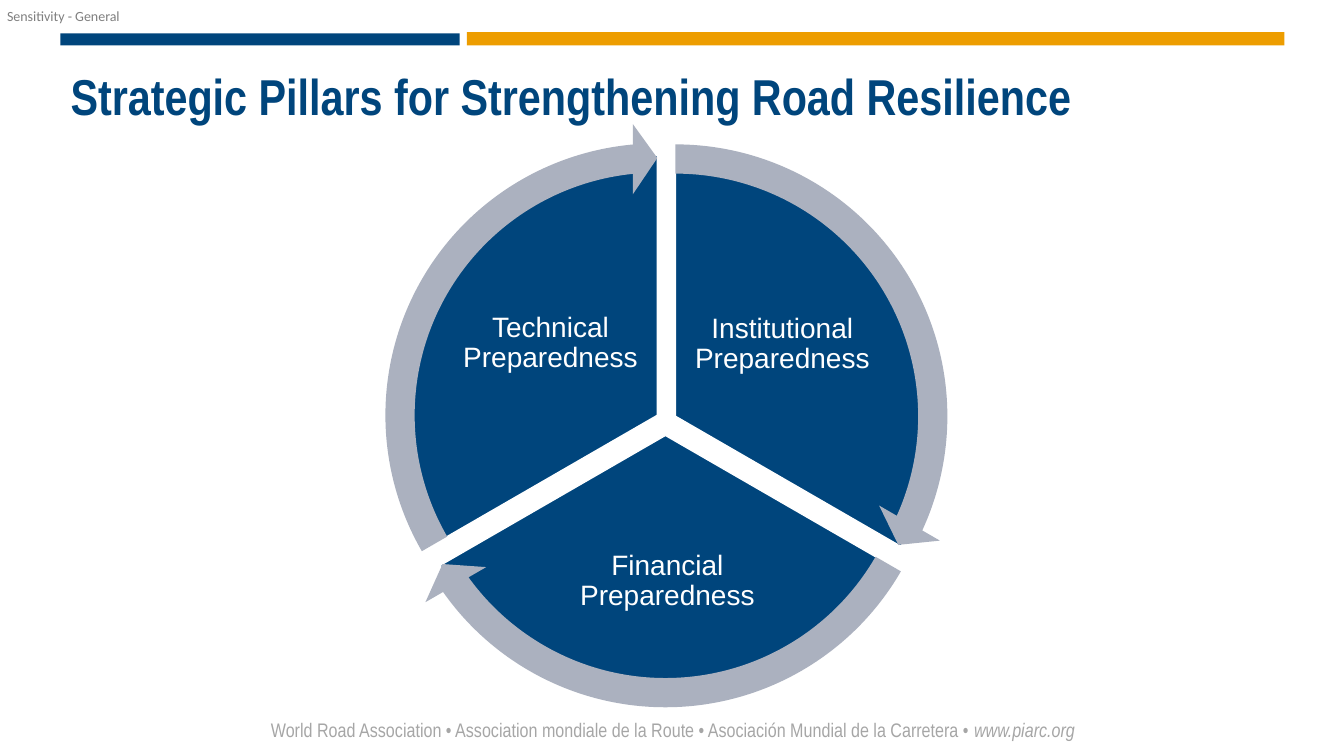
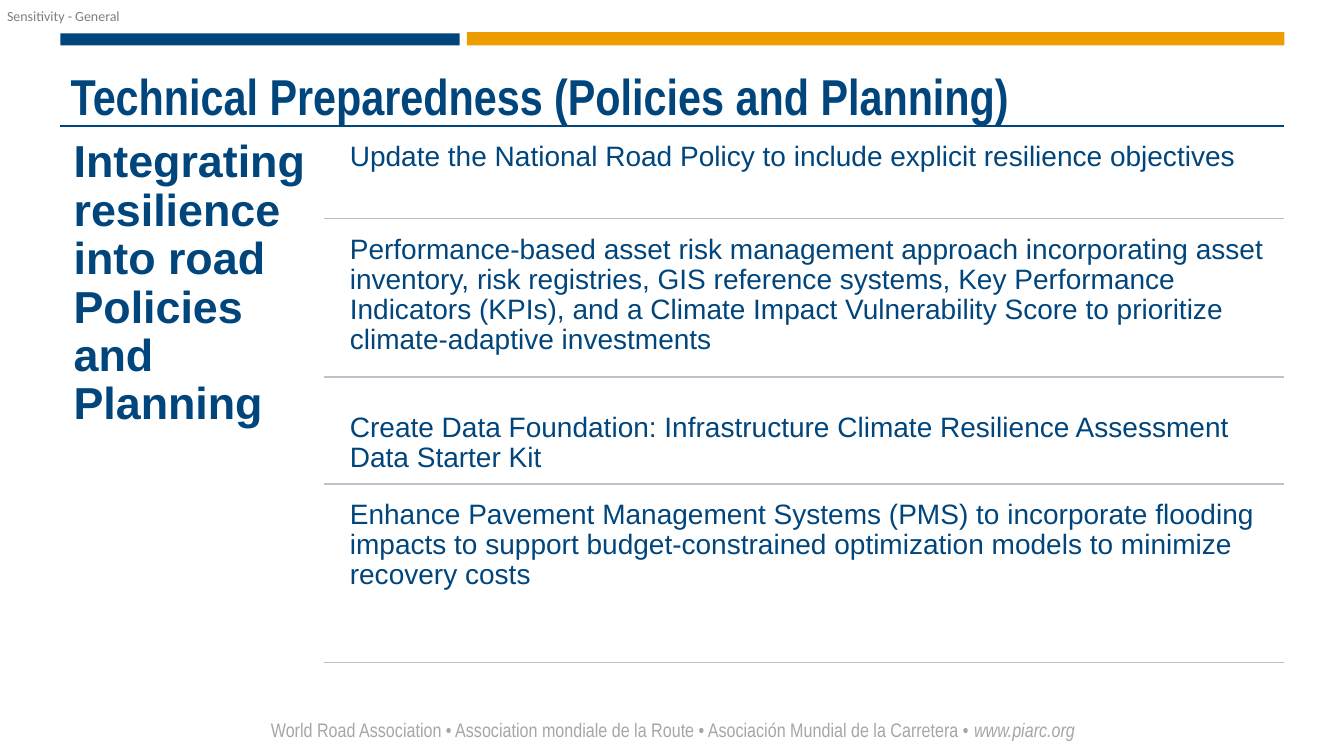
"""Build two slides on road resilience with a shared frame."""
from dataclasses import dataclass

from lxml import etree
from pptx import Presentation
from pptx.dml.color import RGBColor
from pptx.enum import shapes as kinds, text as modes
from pptx.oxml import ns
from pptx.shapes.autoshape import Shape
from pptx.slide import Slide
from pptx.text.text import TextFrame
from pptx.util import Inches, Pt

NAVY = RGBColor(0x00, 0x45, 0x7C)
AMBER = RGBColor(0xED, 0x9D, 0x00)
WHITE = RGBColor(0xFF, 0xFF, 0xFF)
STEEL = RGBColor(0xAB, 0xB1, 0xBF)
RULE = RGBColor(0xBD, 0xC1, 0xCC)
PALE = RGBColor(0xA6, 0xA6, 0xA6)
GREY = RGBColor(0x7F, 0x7F, 0x7F)

Box = tuple[float, float, float, float]
Kind = kinds.MSO_AUTO_SHAPE_TYPE
Align = modes.PP_ALIGN
Anchor = modes.MSO_ANCHOR

LEFT, RIGHT = 0.6, 12.73
PIE, RING, SHIFT = 5.16, 5.8, 0.32
TIP = 3.275


@dataclass
class Style:
    size: float
    color: RGBColor
    face: str = "Arial"
    bold: bool = False
    align: Align = Align.LEFT
    lead: float = 0.9


@dataclass
class Pillar:
    label: str
    left: float
    top: float
    start: float
    end: float
    area: Box


@dataclass
class Action:
    label: str
    top: float
    height: float
    rule: float


TITLE = Style(36, NAVY, "Arial Narrow", True)
FOOT = Style(14, PALE, "Arial Narrow", align=Align.CENTER, lead=1.0)
MARK = Style(10, GREY, "Calibri", lead=1.0)
LABEL = Style(20, WHITE, align=Align.CENTER)
LEAD = Style(32, NAVY, bold=True)
BODY = Style(20, NAVY)

PILLARS = [
    Pillar("Institutional Preparedness", 4.12, 1.55, 162, 18, (6.84, 2.65, 1.84, 1.54)),
    Pillar("Financial Preparedness", 4.02, 1.74, 18, 90, (5.24, 5.09, 2.76, 1.35)),
    Pillar("Technical Preparedness", 3.94, 1.54, 90, 162, (4.54, 2.64, 1.84, 1.54)),
]

ACTIONS = [
    Action("Update the National Road Policy to include explicit resilience objectives",
           1.33, 0.84, 2.17),
    Action("Performance-based asset risk management approach incorporating asset "
           "inventory, risk registries, GIS reference systems, Key Performance "
           "Indicators (KPIs), and a Climate Impact Vulnerability Score to prioritize "
           "climate-adaptive investments", 2.25, 1.69, 3.74),
    Action("Create Data Foundation: Infrastructure Climate Resilience Assessment "
           "Data Starter Kit", 4.02, 0.77, 4.8),
    Action("Enhance Pavement Management Systems (PMS) to incorporate flooding impacts "
           "to support budget-constrained optimization models to minimize recovery costs",
           4.88, 1.69, 6.57),
]


def style(frame: TextFrame, look: Style) -> None:
    """Format every run of a frame."""
    for para in frame.paragraphs:
        para.alignment = look.align
        para.line_spacing = look.lead
        for run in para.runs:
            font = run.font
            font.size, font.name, font.bold = Pt(look.size), look.face, look.bold
            font.color.rgb = look.color


def write(slide: Slide, words: str, box: Box, look: Style, pad: float = 0,
          anchor: Anchor = Anchor.TOP, wrap: bool = True) -> TextFrame:
    """Add a text box with equal insets."""
    frame = slide.shapes.add_textbox(*map(Inches, box)).text_frame
    frame.word_wrap = wrap
    frame.vertical_anchor = anchor
    frame.margin_left = frame.margin_right = Inches(pad)
    frame.margin_top = frame.margin_bottom = Inches(pad)
    frame.text = words
    style(frame, look)
    return frame


def draw(slide: Slide, kind: Kind, box: Box, fill: RGBColor) -> Shape:
    """Add a flat shape without outline."""
    shape = slide.shapes.add_shape(kind, *map(Inches, box))
    shape.shadow.inherit = False
    shape.fill.solid()
    shape.fill.fore_color.rgb = fill
    shape.line.fill.background()
    return shape


def rule(slide: Slide, left: float, top: float, color: RGBColor) -> None:
    """Draw a thin line to the right margin."""
    line = slide.shapes.add_connector(
        kinds.MSO_CONNECTOR.STRAIGHT, Inches(left), Inches(top), Inches(RIGHT), Inches(top))
    line.line.color.rgb = color
    line.line.width = Pt(1)
    etree.SubElement(line.element.spPr, ns.qn("a:effectLst"))


def start(deck: Presentation, words: str, height: float) -> Slide:
    """Add a slide with bands, footer, mark and title."""
    slide = deck.slides.add_slide(deck.slide_layouts[5])
    draw(slide, Kind.RECTANGLE, (LEFT, 0.33, 3.96, 0.12), NAVY)
    draw(slide, Kind.RECTANGLE, (4.63, 0.32, 8.11, 0.13), AMBER)
    foot = write(slide, "World Road Association • Association mondiale de la Route • "
                 "Asociación Mundial de la Carretera • ", (0.61, 7.07, 12.13, 0.34),
                 FOOT, 0.05)
    link = foot.paragraphs[0].add_run()
    link.text = "www.piarc.org"
    style(foot, FOOT)
    link.font.italic = True
    write(slide, "Sensitivity - General", (0.07, 0.07, 1.15, 0.17), MARK, wrap=False)
    title = slide.shapes.title
    title.left, title.top, title.width, title.height = map(
        Inches, (LEFT, 0.66, 12.14, height))
    frame = title.text_frame
    frame.text = words
    frame.auto_size = modes.MSO_AUTO_SIZE.NONE
    frame.vertical_anchor = Anchor.TOP
    style(frame, TITLE)
    return slide


def cycle(deck: Presentation) -> None:
    """Build the wheel of three pillars."""
    slide = start(deck, "Strategic Pillars for Strengthening Road Resilience", 0.7)
    for item in PILLARS:
        pie = draw(slide, Kind.PIE, (item.left, item.top, PIE, PIE), NAVY)
        pie.adjustments[0], pie.adjustments[1] = item.start, item.end
        pie.line.color.rgb = WHITE
        pie.line.width = Pt(1)
        write(slide, item.label, item.area, LABEL, 0.03, Anchor.MIDDLE)
    for item in PILLARS:
        ring = draw(slide, Kind.CIRCULAR_ARROW,
                    (item.left - SHIFT, item.top - SHIFT, RING, RING), STEEL)
        for spot, value in enumerate((0.05, TIP, item.end - TIP, item.start, 0.06)):
            ring.adjustments[spot] = value


def plan(deck: Presentation) -> None:
    """Build the ruled list of actions."""
    slide = start(deck, "Technical Preparedness (Policies and Planning)", 0.58)
    rule(slide, LEFT, 1.25, NAVY)
    write(slide, "Integrating resilience into road Policies and Planning",
          (LEFT, 1.25, 2.61, 5.41), LEAD, 0.13)
    for item in ACTIONS:
        write(slide, item.label, (3.39, item.top, 9.34, item.height), BODY, 0.08)
        rule(slide, 3.21, item.rule, RULE)


def main() -> None:
    """Save the deck."""
    deck = Presentation()
    deck.slide_width, deck.slide_height = Inches(13.33), Inches(7.5)
    cycle(deck)
    plan(deck)
    deck.save("out.pptx")


if __name__ == "__main__":
    main()
